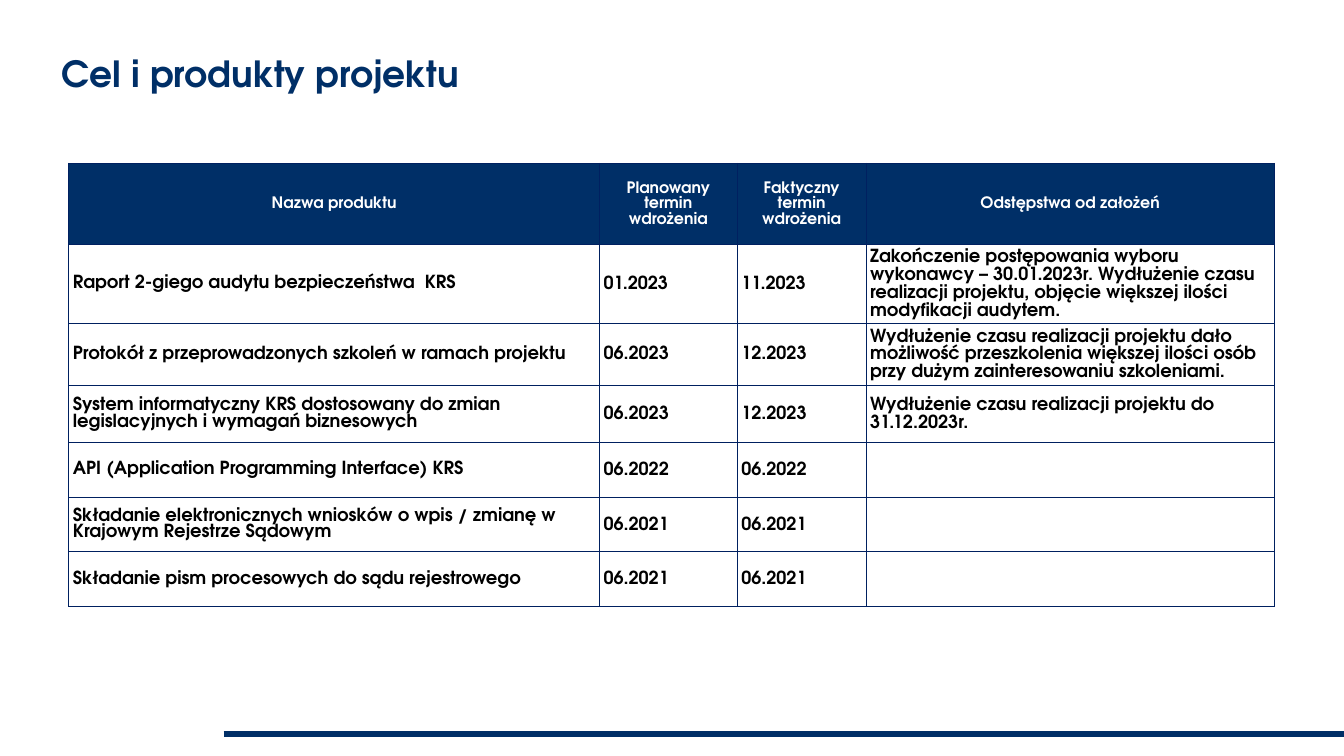
from dataclasses import dataclass

import pptx
import pptx.dml.color
import pptx.enum.shapes
import pptx.enum.text
import pptx.oxml
import pptx.oxml.ns
import pptx.util

Pt = pptx.util.Pt
ALIGN = pptx.enum.text.PP_ALIGN
ANCHOR = pptx.enum.text.MSO_ANCHOR

FONT = "TeX Gyre Adventor"
NAVY = "002F67"
BORDER = "002060"
WHITE = "FFFFFF"
BLACK = "000000"
SLIDE_W, SLIDE_H = 1194.5, 671.8
TABLE_LEFT, TABLE_TOP = 61.2, 145.2
COL_WIDTHS = [471.6, 122.4, 114.5, 362.9]
HEADER_HEIGHT = 72
HEADERS = [
    "Nazwa produktu",
    "Planowany termin wdrożenia",
    "Faktyczny termin wdrożenia",
    "Odstępstwa od założeń",
]


@dataclass
class Product:
    height: float
    name: str
    planned: str
    actual: str
    deviation: str = ""


PRODUCTS = [
    Product(70, "Raport 2-giego audytu bezpieczeństwa  KRS", "01.2023", "11.2023",
            "Zakończenie postępowania wyboru wykonawcy – 30.01.2023r. Wydłużenie czasu "
            "realizacji projektu, objęcie większej ilości modyfikacji audytem."),
    Product(54, "Protokół z przeprowadzonych szkoleń w ramach projektu", "06.2023", "12.2023",
            "Wydłużenie czasu realizacji projektu dało możliwość przeszkolenia większej "
            "ilości osób przy dużym zainteresowaniu szkoleniami."),
    Product(51.3, "System informatyczny KRS dostosowany do zmian legislacyjnych "
            "i wymagań biznesowych", "06.2023", "12.2023",
            "Wydłużenie czasu realizacji projektu do 31.12.2023r."),
    Product(48.5, "API (Application Programming Interface) KRS", "06.2022", "06.2022"),
    Product(48.5, "Składanie elektronicznych wniosków o wpis / zmianę w Krajowym "
            "Rejestrze Sądowym", "06.2021", "06.2021"),
    Product(48.5, "Składanie pism procesowych do sądu rejestrowego", "06.2021", "06.2021"),
]


def rgb(color: str) -> pptx.dml.color.RGBColor:
    return pptx.dml.color.RGBColor.from_string(color)


def write(tf, text: str, *, size: float, color: str, align=ALIGN.LEFT,
          spacing: float = 1.0) -> None:
    p = tf.paragraphs[0]
    p.alignment = align
    p.line_spacing = spacing
    r = p.add_run()
    r.text = text
    r.font.name = FONT
    r.font.size = Pt(size)
    r.font.bold = True
    r.font.color.rgb = rgb(color)


def set_borders(cell, color: str, width: float) -> None:
    tc_pr = cell._tc.get_or_add_tcPr()
    for side in ("lnL", "lnR", "lnT", "lnB"):
        tc_pr.append(pptx.oxml.parse_xml(
            f'<a:{side} {pptx.oxml.ns.nsdecls("a")} w="{Pt(width)}">'
            f'<a:solidFill><a:srgbClr val="{color}"/></a:solidFill></a:{side}>'))


def format_cell(cell, margin_x: float, margin_y: float) -> None:
    cell.vertical_anchor = ANCHOR.MIDDLE
    cell.margin_left = cell.margin_right = Pt(margin_x)
    cell.margin_top = cell.margin_bottom = Pt(margin_y)
    set_borders(cell, BORDER, 1)


def add_title(s, text: str) -> None:
    sp = s.shapes.title
    sp.left, sp.top, sp.width, sp.height = Pt(54.7), Pt(0), Pt(996.5), Pt(85)
    tf = sp.text_frame
    tf.margin_left = tf.margin_right = tf.margin_top = tf.margin_bottom = 0
    tf.vertical_anchor = ANCHOR.BOTTOM
    tf.word_wrap = True
    tf.auto_size = pptx.enum.text.MSO_AUTO_SIZE.NONE
    write(tf, text, size=32, color=NAVY, spacing=0.9)


def add_footer_line(s) -> None:
    y = Pt(652.3)
    line = s.shapes.add_connector(
        pptx.enum.shapes.MSO_CONNECTOR.STRAIGHT, Pt(198.7), y, Pt(SLIDE_W), y)
    line.line.color.rgb = rgb(NAVY)
    line.line.width = Pt(5.25)
    line._element.spPr.append(
        pptx.oxml.parse_xml(f'<a:effectLst {pptx.oxml.ns.nsdecls("a")}/>'))


def add_product_table(s) -> None:
    heights = [HEADER_HEIGHT] + [product.height for product in PRODUCTS]
    table = s.shapes.add_table(
        len(heights), len(COL_WIDTHS), Pt(TABLE_LEFT), Pt(TABLE_TOP),
        Pt(sum(COL_WIDTHS)), Pt(sum(heights))).table
    table.first_row = table.horz_banding = False
    for column, width in zip(table.columns, COL_WIDTHS):
        column.width = Pt(width)
    for row, height in zip(table.rows, heights):
        row.height = Pt(height)

    for col, header in enumerate(HEADERS):
        cell = table.cell(0, col)
        format_cell(cell, 5, 0)
        cell.fill.solid()
        cell.fill.fore_color.rgb = rgb(NAVY)
        write(cell.text_frame, header, size=14, color=WHITE,
              align=ALIGN.CENTER, spacing=1.07)

    for row, product in enumerate(PRODUCTS, start=1):
        texts = [product.name, product.planned, product.actual, product.deviation]
        for col, text in enumerate(texts):
            cell = table.cell(row, col)
            format_cell(cell, 3.6, 3.6)
            cell.fill.background()
            if text:
                write(cell.text_frame, text, size=16, color=BLACK,
                      spacing=1.07 if col else 1.0)


def main() -> None:
    prs = pptx.Presentation()
    prs.slide_width, prs.slide_height = Pt(SLIDE_W), Pt(SLIDE_H)
    s = prs.slides.add_slide(prs.slide_layouts[5])
    add_footer_line(s)
    add_title(s, "Cel i produkty projektu")
    add_product_table(s)
    prs.save("out.pptx")


if __name__ == "__main__":
    main()
